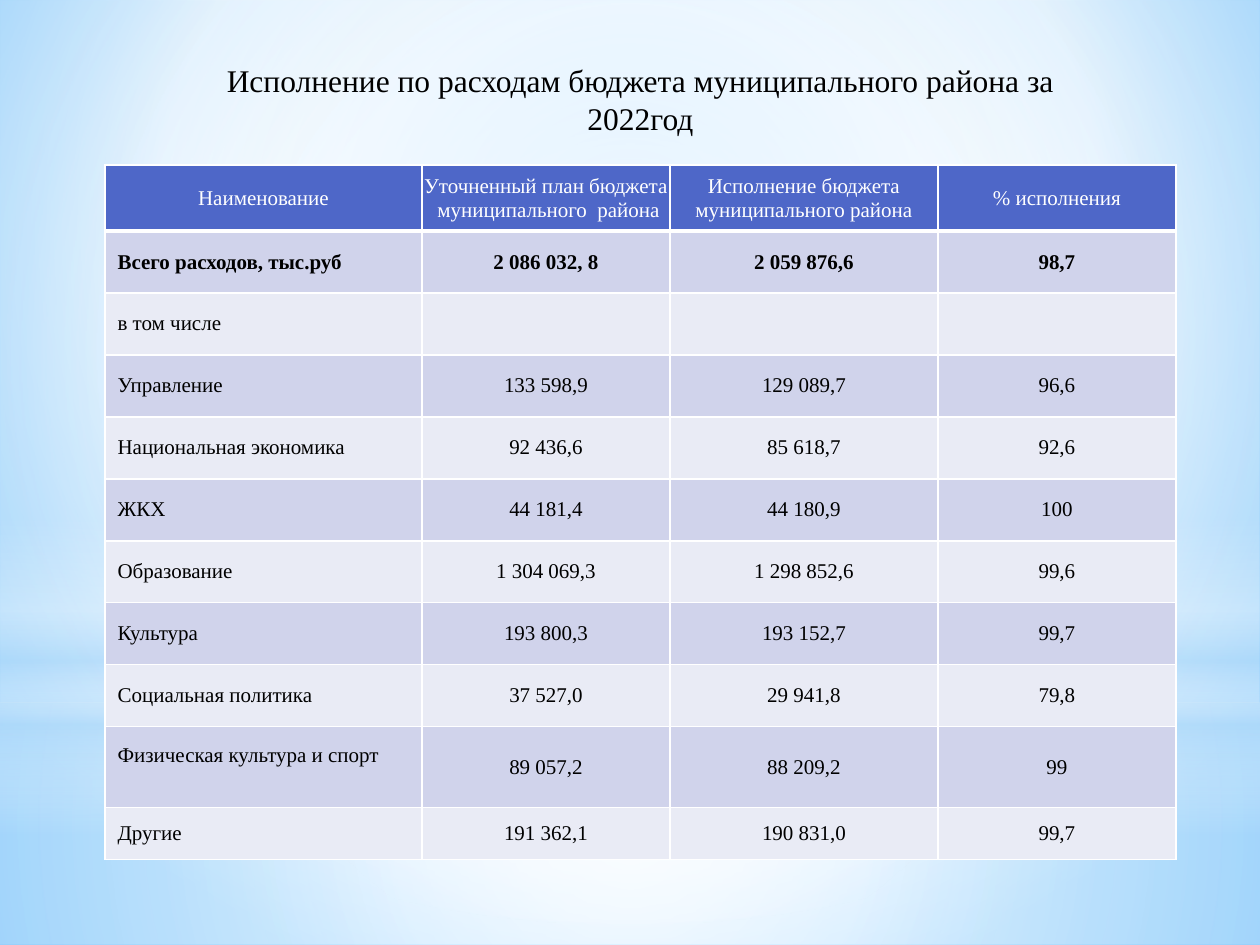
from lxml import etree
from pptx import Presentation
from pptx import util as u
from pptx.enum import shapes, text
from pptx.dml.color import RGBColor
from pptx.oxml import ns

PX_PER_INCH = 126
FONT = "Times New Roman"
COLORS = {
    "black": "000000",
    "white": "FFFFFF",
    "header": "4E67C8",
    "odd": "D0D3EB",
    "even": "E9EBF5",
    "haze": "B4DCFA",
    "sky": "9ED5FF",
    "deep": "5BB9FF",
}
CENTER = (50, 50, 50, 50)
BACKGROUND = [(0, "sky", 100), (60, "white", 100), (100, "deep", 100)]
RECTANGLE = shapes.MSO_SHAPE.RECTANGLE
OVAL = shapes.MSO_SHAPE.OVAL
GLOWS = [
    (RECTANGLE, (0, 703, 1260, 242),
     [(0, "white", 91), (37, "white", 76), (100, "haze", 79)], CENTER),
    (RECTANGLE, (0, 0, 1260, 703),
     [(0, "white", 89), (48, "white", 62), (100, "haze", 79)], CENTER),
    (RECTANGLE, (0, 519, 1260, 315),
     [(0, "white", 0), (29, "white", 30), (45, "haze", 40),
      (55, "white", 26), (65, "haze", 60), (100, "white", 0)], None),
    (OVAL, (0, 220, 1260, 703),
     [(0, "white", 100), (56, "white", 0)], CENTER),
]
TITLE = "Исполнение по расходам бюджета муниципального района за 2022год"
COLUMN_WIDTHS = [317, 248, 268, 238]
ROW_HEIGHTS = [66] + [62] * 8 + [81, 52]
ROWS = [
    ("Наименование", "Уточненный план бюджета  муниципального  района",
     "Исполнение бюджета муниципального района", "% исполнения"),
    ("Всего расходов, тыс.руб", "2 086 032, 8", "2 059 876,6", "98,7"),
    ("в том числе", "", "", ""),
    ("Управление", "133 598,9", "129 089,7", "96,6"),
    ("Национальная экономика", "92 436,6", "85 618,7", "92,6"),
    ("ЖКХ", "44 181,4", "44 180,9", "100"),
    ("Образование", "1 304 069,3", "1 298 852,6", "99,6"),
    ("Культура", "193 800,3", "193 152,7", "99,7"),
    ("Социальная политика", "37 527,0", "29 941,8", "79,8"),
    ("Физическая культура и спорт", "89 057,2", "88 209,2", "99"),
    ("Другие", "191 362,1", "190 831,0", "99,7"),
]
TOTAL_ROW = 1
SPORT_ROW = 9
TIGHT_MARGINS = {"margin_left": 1, "margin_right": 1,
                 "margin_top": 1, "margin_bottom": 0}
RAISED_MARGINS = {"margin_bottom": 29}


def px(length):
    return u.Emu(round(length * 914400 / PX_PER_INCH))


def set_values(target, values):
    for name, value in values.items():
        setattr(target, name, value)


def add_node(parent, tag, **attributes):
    node = etree.SubElement(parent, ns.qn(tag))
    for name, value in attributes.items():
        node.set(name, str(value))
    return node


def set_gradient(fill, owner, stops, center):
    fill.solid()
    solid = owner.find(".//" + ns.qn("a:solidFill"))
    gradient = etree.Element(ns.qn("a:gradFill"), rotWithShape="1")
    stop_list = add_node(gradient, "a:gsLst")
    for position, color, opacity in stops:
        stop = add_node(stop_list, "a:gs", pos=position * 1000)
        shade = add_node(stop, "a:srgbClr", val=COLORS[color])
        if opacity < 100:
            add_node(shade, "a:alpha", val=opacity * 1000)
    if center:
        circle = add_node(gradient, "a:path", path="circle")
        sides = {side: inset * 1000 for side, inset in zip("ltrb", center)}
        add_node(circle, "a:fillToRect", **sides)
    else:
        add_node(gradient, "a:lin", ang=90 * 60000, scaled=0)
    solid.getparent().replace(solid, gradient)


def add_glow(slide, kind, box, stops, center):
    shape = slide.shapes.add_shape(kind, *map(px, box))
    shape.shadow.inherit = False
    shape.line.fill.background()
    set_gradient(shape.fill, shape.element, stops, center)


def write_text(frame, content, size, color, alignment, bold=False):
    frame.text = content
    paragraph = frame.paragraphs[0]
    paragraph.alignment = alignment
    set_values(paragraph.font, {"name": FONT, "size": u.Pt(size), "bold": bold})
    for run in paragraph.runs:
        set_values(run.font, {"name": FONT, "size": u.Pt(size), "bold": bold})
        run.font.color.rgb = RGBColor.from_string(COLORS[color])


def add_title(slide):
    title = slide.shapes.title
    box = map(px, (164, 55, 953, 89))
    set_values(title, dict(zip(("left", "top", "width", "height"), box)))
    set_values(title.text_frame, {
        "word_wrap": True,
        "vertical_anchor": text.MSO_ANCHOR.TOP,
        "auto_size": text.MSO_AUTO_SIZE.SHAPE_TO_FIT_TEXT,
    })
    write_text(title.text_frame, TITLE, 18, "black", text.PP_ALIGN.CENTER)
    title.element.getparent().append(title.element)


def set_borders(cell, widths):
    properties = cell._tc.get_or_add_tcPr()
    for index, (side, width) in enumerate(zip("LRTB", widths)):
        line = add_node(properties, "a:ln" + side, w=u.Pt(width))
        solid = add_node(line, "a:solidFill")
        add_node(solid, "a:srgbClr", val=COLORS["white"])
        properties.insert(index, line)


def format_cell(cell, content, row, column):
    is_header = row == 0
    fill = "header" if is_header else ("even", "odd")[row % 2]
    cell.fill.solid()
    cell.fill.fore_color.rgb = RGBColor.from_string(COLORS[fill])
    cell.vertical_anchor = text.MSO_ANCHOR.MIDDLE
    is_centered = is_header or column > 0
    alignment = text.PP_ALIGN.CENTER if is_centered else text.PP_ALIGN.LEFT
    write_text(cell.text_frame, content, 12, "white" if is_header else "black",
               alignment, row == TOTAL_ROW)
    margins = {}
    if is_header and column in (1, 2):
        margins = TIGHT_MARGINS
    elif row == SPORT_ROW and column == 0:
        margins = RAISED_MARGINS
    set_values(cell, {name: px(value) for name, value in margins.items()})
    set_borders(cell, (1, 1, 3 if row == 1 else 1, 3 if is_header else 1))


def add_budget_table(slide):
    size = sum(COLUMN_WIDTHS), sum(ROW_HEIGHTS)
    frame = slide.shapes.add_table(len(ROWS), len(COLUMN_WIDTHS),
                                   *map(px, (105, 165, *size)))
    table = frame.table
    set_values(table, {"first_row": False, "horz_banding": False})
    for column, width in zip(table.columns, COLUMN_WIDTHS):
        column.width = px(width)
    for row, height in zip(table.rows, ROW_HEIGHTS):
        row.height = px(height)
    for row, contents in enumerate(ROWS):
        for column, content in enumerate(contents):
            format_cell(table.cell(row, column), content, row, column)


def main():
    presentation = Presentation()
    set_values(presentation, {"slide_width": px(1260), "slide_height": px(945)})
    slide = presentation.slides.add_slide(presentation.slide_layouts[5])
    set_gradient(slide.background.fill, slide.element, BACKGROUND, (20, 10, 20, 60))
    for glow in GLOWS:
        add_glow(slide, *glow)
    add_title(slide)
    add_budget_table(slide)
    presentation.save("out.pptx")


if __name__ == "__main__":
    main()
